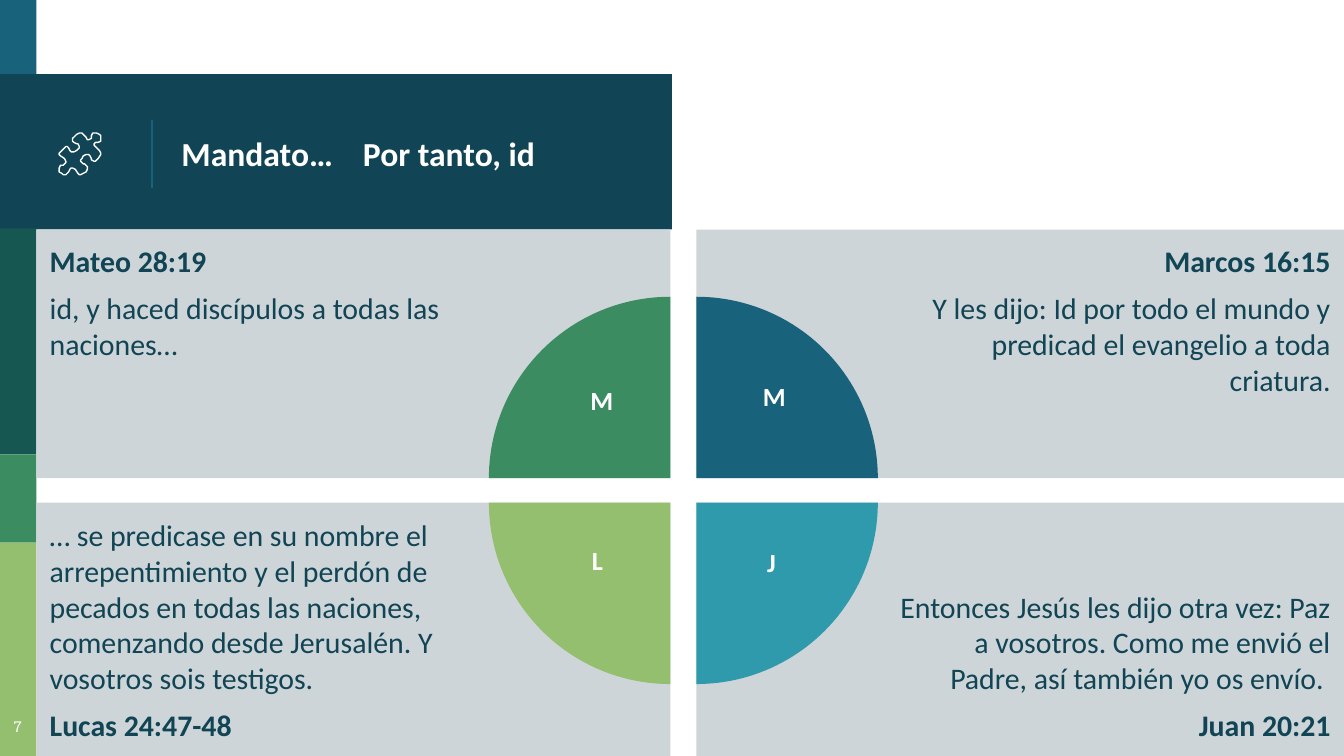
from lxml.etree import SubElement
from pptx import Presentation
from pptx.dml.color import RGBColor
from pptx.enum.shapes import MSO_CONNECTOR as Connector, MSO_SHAPE as Shape
from pptx.enum.text import MSO_ANCHOR as Anchor, PP_ALIGN as Align
from pptx.oxml.ns import qn
from pptx.util import Cm, Pt

COLORS = {
    "white": "FFFFFF", "navy": "114454", "blue": "18637B", "pine": "165751",
    "green": "3B8D61", "lime": "94BF6E", "teal": "309AAD", "gray": "CED5D8",
}
WIDTH, HEIGHT = 25.4, 14.29
STRIP = 0.69
LEFT_END, RIGHT_START = 12.67, 13.16
UPPER_START, UPPER_END, LOWER_START = 4.34, 9.04, 9.5
INSET, PIE_INSET = 0.25, 3.81
PIE_SIZE = 6.86

# Outline of the puzzle piece, in hundredths of an inch
PUZZLE = [
    (71, 106), (73, 106), (75, 105), (75.4, 103), (75, 101), (74, 100), (72, 99), (70, 98.7),
    (69, 99.3), (68, 101), (67.5, 103), (66, 104), (65, 103.7), (64, 102.5), (62, 100.3),
    (61, 99.2), (60, 98.7), (59, 99), (57, 100.3), (55, 102), (54, 103.4), (53.6, 104.5),
    (54, 105.4), (55, 106), (57, 106.6), (58, 107.2), (59, 109), (59, 110), (58, 111.4),
    (57, 112.4), (55, 113.3), (53, 113), (52, 112), (51.3, 110), (50.5, 109), (49, 108.7),
    (47.5, 109.5), (45.5, 111.7), (44, 114), (44, 115), (45, 116.2), (48, 118.5), (49, 120),
    (49, 121), (48, 122.2), (47, 122.8), (45, 123.4), (44, 124.6), (43.7, 126), (44.3, 127.6),
    (45.5, 129), (47, 129.8), (49, 130), (50.5, 129), (51, 127.5), (51.5, 126), (53, 125.2),
    (54.5, 125), (56, 126.2), (58, 128.7), (59, 129.7), (60, 129.9), (61.5, 129.2),
    (63.5, 127.5), (65, 125.5), (65.3, 124), (64.5, 123), (63, 122.2), (61.5, 121.5),
    (60.5, 120), (60.4, 119), (61, 117.7), (62, 116.3), (64, 115.3), (65.5, 115.2),
    (67, 116.2), (68, 118), (68.5, 119.3), (69.5, 120), (71, 119.6), (73, 117.7), (75, 115),
    (75.3, 113.7), (74.5, 112.3), (71.5, 109.7), (70.4, 108.5), (70.5, 107),
]


def rgb(name):
    return RGBColor.from_string(COLORS[name])


class Painter:
    """Holds the text style and the page being drawn."""

    def __init__(self, page, font="Calibri"):
        self.page = page
        self.font = font

    def style(self, para, size, color, bold=False, align=Align.LEFT, font=None):
        para.alignment = align
        for span in para.runs:
            span.font.name = font or self.font
            span.font.size = Pt(size)
            span.font.bold = bold
            span.font.color.rgb = rgb(color)

    def frame(self, box, left, right, anchor, top=INSET):
        frame = box.text_frame
        frame.word_wrap = True
        frame.vertical_anchor = anchor
        frame.margin_left, frame.margin_right = Cm(left), Cm(right)
        frame.margin_top = frame.margin_bottom = Cm(top)
        return frame

    def shape(self, kind, left, top, width, height, color):
        shape = self.page.shapes.add_shape(kind, Cm(left), Cm(top), Cm(width), Cm(height))
        shape.shadow.inherit = False
        shape.fill.solid()
        shape.fill.fore_color.rgb = rgb(color)
        shape.line.fill.background()
        return shape

    def divider(self, x, top, bottom, color):
        line = self.page.shapes.add_connector(
            Connector.STRAIGHT, Cm(x), Cm(top), Cm(x), Cm(bottom))
        line.line.color.rgb = rgb(color)
        line.line.width = Pt(0.75)
        SubElement(line.element.spPr, qn("a:effectLst"))

    def title(self, text, tab):
        box = self.page.shapes.title
        box.left, box.top, box.width, box.height = Cm(3.18), Cm(1.47), Cm(8.92), Cm(2.84)
        frame = self.frame(box, INSET, INSET, Anchor.MIDDLE)
        frame.text = text
        para = frame.paragraphs[0]
        self.style(para, 18, "white", bold=True)
        tabs = SubElement(para._p.get_or_add_pPr(), qn("a:tabLst"))
        SubElement(tabs, qn("a:tab"), pos=str(Cm(tab)), algn="l")
        box.element.getparent().append(box.element)  # in front of the band

    def label(self, text, left, top, width, height, size=14, bold=True, font=None, inset=0.13):
        box = self.page.shapes.add_textbox(Cm(left), Cm(top), Cm(width), Cm(height))
        frame = self.frame(box, INSET, INSET, Anchor.TOP, inset)
        frame.text = text
        self.style(frame.paragraphs[0], size, "white", bold, Align.CENTER, font)

    def panel(self, is_left, is_upper, reference, verse):
        """Text panel whose reference sits on the outer edge of the page."""
        left, right = (STRIP, LEFT_END) if is_left else (RIGHT_START, WIDTH)
        top, bottom = (UPPER_START, UPPER_END) if is_upper else (LOWER_START, HEIGHT)
        box = self.shape(Shape.RECTANGLE, left, top, right - left, bottom - top, "gray")
        margins = (INSET, PIE_INSET) if is_left else (PIE_INSET, INSET)
        frame = self.frame(box, *margins, Anchor.TOP if is_upper else Anchor.BOTTOM)
        lines = [reference, verse] if is_upper else [verse, reference]
        frame.text = "\n".join(lines)
        for para, line in zip(frame.paragraphs, lines):
            self.style(para, 16, "navy", line == reference,
                       Align.LEFT if is_left else Align.RIGHT)
        frame.paragraphs[1].space_before = Pt(6)

    def quarter(self, is_left, is_upper, turn, color):
        """Quarter circle centred on the inner corner of its panel."""
        x = LEFT_END if is_left else RIGHT_START
        y = UPPER_END if is_upper else LOWER_START
        pie = self.shape(Shape.PIE, x - PIE_SIZE / 2, y - PIE_SIZE / 2,
                         PIE_SIZE, PIE_SIZE, color)
        pie.adjustments[0], pie.adjustments[1] = 108, 162
        pie.rotation = turn

    def outline(self, points, color):
        builder = self.page.shapes.build_freeform(*points[0], scale=Cm(0.0254))
        builder.add_line_segments(points[1:], close=True)
        icon = builder.convert_to_shape()
        icon.shadow.inherit = False
        icon.fill.background()
        icon.line.color.rgb = rgb(color)
        icon.line.width = Pt(0.75)


def main():
    deck = Presentation()
    deck.slide_width, deck.slide_height = Cm(WIDTH), Cm(HEIGHT)
    painter = Painter(deck.slides.add_slide(deck.slide_layouts[5]))

    bands = [
        (0, 1.47, STRIP, "blue"), (1.4, 4.34, 12.7, "navy"), (4.32, 8.59, STRIP, "pine"),
        (8.59, 10.26, STRIP, "green"), (10.26, HEIGHT, STRIP, "lime"),
    ]
    for top, bottom, width, color in bands:
        painter.shape(Shape.RECTANGLE, 0, top, width, bottom - top, color)
    painter.divider(2.87, 2.26, 3.56, "blue")
    painter.title("Mandato…\tPor tanto, id", tab=3.43)
    painter.label("7", -0.15, 13.39, 0.97, 0.89, 8, False, "Roboto Slab", INSET)

    panels = [
        (True, True, "Mateo 28:19", "id, y haced discípulos a todas las naciones…"),
        (False, True, "Marcos 16:15",
         "Y les dijo: Id por todo el mundo y predicad el evangelio a toda criatura."),
        (True, False, "Lucas 24:47-48",
         "… se predicase en su nombre el arrepentimiento y el perdón de pecados en todas "
         "las naciones, comenzando desde Jerusalén. Y vosotros sois testigos."),
        (False, False, "Juan 20:21",
         "Entonces Jesús les dijo otra vez: Paz a vosotros. Como me envió el Padre, "
         "así también yo os envío. "),
    ]
    for panel in panels:
        painter.panel(*panel)

    quarters = [(True, True, "green"), (False, True, "blue"),
                (False, False, "teal"), (True, False, "lime")]
    for step, (is_left, is_upper, color) in enumerate(quarters):
        painter.quarter(is_left, is_upper, 90 * step, color)

    letters = [("M", 10.46, 7.14, 1.83), ("M", 13.72, 7.06, 1.83),
               ("L", 10.72, 10.16, 1.14), ("J", 14.02, 10.19, 1.12)]
    for letter, left, top, width in letters:
        painter.label(letter, left, top, width, 1.24)
    painter.outline(PUZZLE, "white")
    deck.save("out.pptx")


if __name__ == "__main__":
    main()
